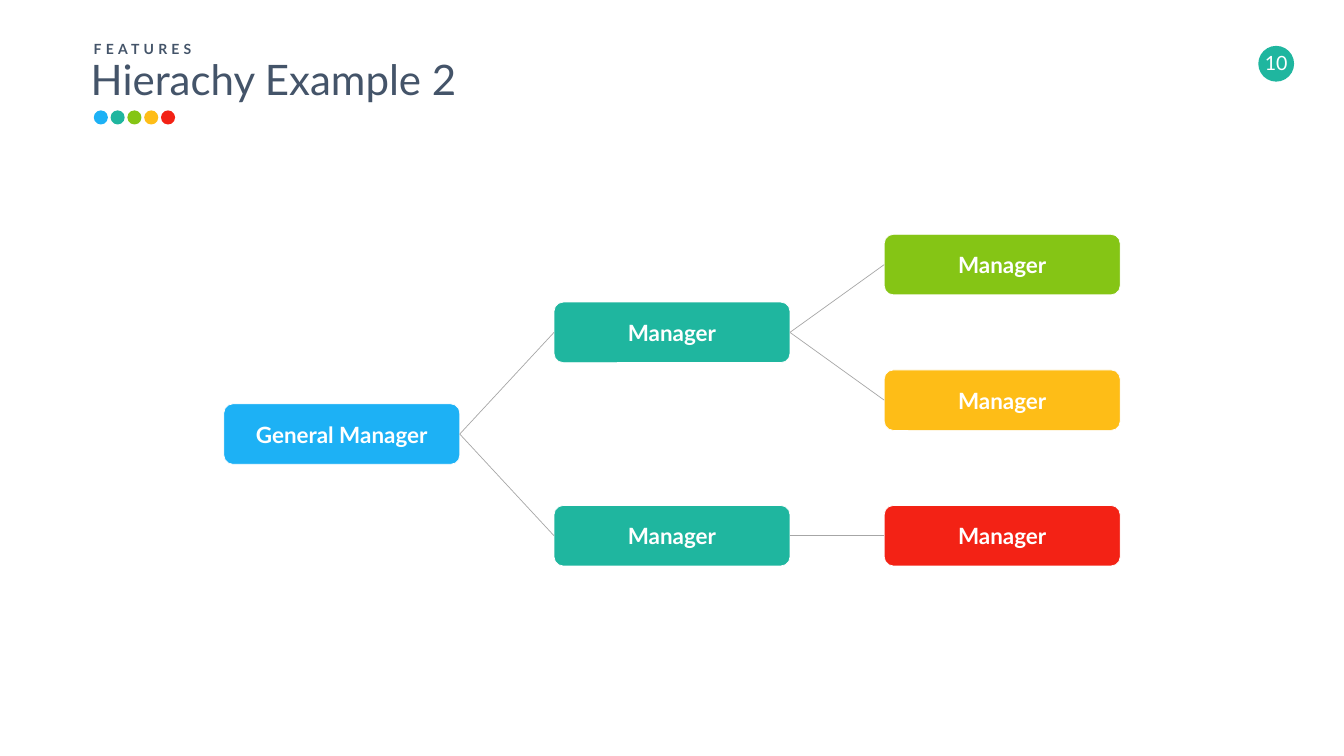
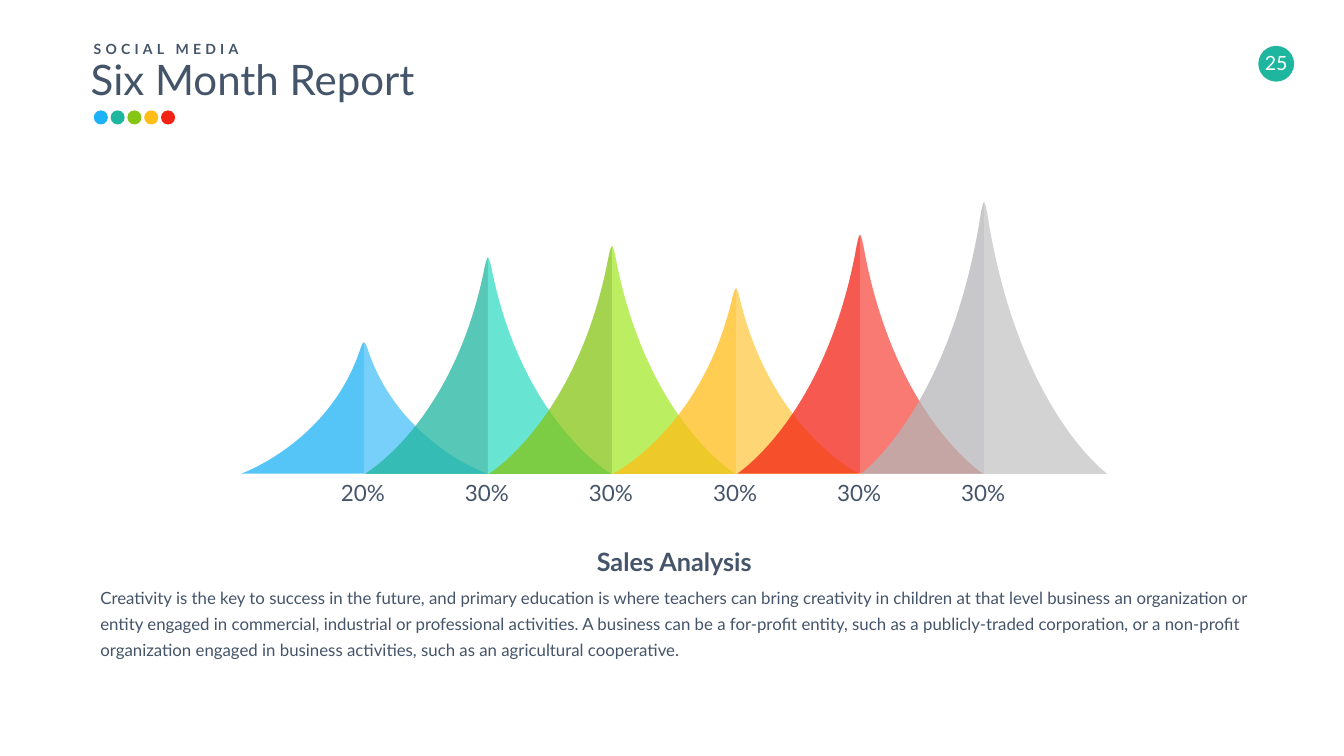
from lxml import etree
from pptx import Presentation
from pptx.dml.color import RGBColor
from pptx.enum.shapes import MSO_CONNECTOR, MSO_SHAPE
from pptx.enum.text import MSO_ANCHOR, MSO_AUTO_SIZE, PP_ALIGN
from pptx.oxml.ns import qn
from pptx.util import Inches, Pt

LEFT, CENTER = PP_ALIGN.LEFT, PP_ALIGN.CENTER
TOP, MIDDLE = MSO_ANCHOR.TOP, MSO_ANCHOR.MIDDLE
NO_AUTOFIT = MSO_AUTO_SIZE.NONE
OVAL, ROUNDED = MSO_SHAPE.OVAL, MSO_SHAPE.ROUNDED_RECTANGLE
STRAIGHT = MSO_CONNECTOR.STRAIGHT
LEFT_SITE, RIGHT_SITE = 1, 3

SLIDE_WIDTH, SLIDE_HEIGHT = 26.66, 15
TITLE_ONLY, TITLE_AND_BODY = 5, 1
FONT = "Lato"
COLORS = {
    "text": "445469", "white": "FFFFFF", "line": "A6A6A6",
    "blue": "1DB1F5", "teal": "1FB69F", "green": "85C515",
    "yellow": "FEBD17", "red": "F32215", "gray": "B6B5B7",
    "light blue": "77D0F9", "light teal": "67E5D2", "light green": "BBEE61",
    "light yellow": "FED774", "light red": "F87A73", "light gray": "D3D3D4",
}
ACCENTS = ["blue", "teal", "green", "yellow", "red"]

# Hierarchy grid: box size, and the step between columns and half rows
GRID_LEFT, GRID_TOP = 4.44, 4.65
COLUMN_STEP, ROW_STEP = 6.55, (10.03 - 4.65) / 8
BOX_WIDTH, BOX_HEIGHT = 4.68, 1.2
BOXES = {  # key: (text, column, row, color)
    "general": ("General Manager", 0, 5, "blue"),
    "upper": ("Manager", 1, 2, "teal"),
    "lower": ("Manager", 1, 8, "teal"),
    "first": ("Manager", 2, 0, "green"),
    "second": ("Manager", 2, 4, "yellow"),
    "third": ("Manager", 2, 8, "red"),
}
REPORTS = [("general", "upper"), ("general", "lower"), ("upper", "first"),
           ("upper", "second"), ("lower", "third")]

# Peaks: (label, color, height), evenly spaced on one baseline
PEAKS = [("20%", "blue", 2.61), ("30%", "teal", 4.29), ("30%", "green", 4.52),
         ("30%", "yellow", 3.68), ("30%", "red", 4.74), ("30%", "gray", 5.39)]
FIRST_PEAK, PEAK_STEP, HALF_WIDTH, BASELINE = 7.22, 2.46, 2.44, 9.4
# Outline as shares of half width and height: two curves, then the base
PEAK_OUTLINE = [(1, 0), (1, 0), (0.3, 0.23), (0.04, 0.92),
                (0.025, 0.965), (0.01, 1), (0, 1), (0, 0)]

ANALYSIS = (
    "Creativity is the key to success in the future, and primary education is "
    "where teachers can bring creativity in children at that level business an "
    "organization or entity engaged in commercial, industrial or professional "
    "activities. A business can be a for-profit entity, such as a "
    "publicly-traded corporation, or a non-profit organization engaged in "
    "business activities, such as an agricultural cooperative.")


def color(name):
    return RGBColor.from_string(COLORS[name])


def place(shape, left, top, width, height):
    shape.left, shape.top = Inches(left), Inches(top)
    shape.width, shape.height = Inches(width), Inches(height)


def write(shape, text, size, name="text", bold=False, align=LEFT,
          anchor=TOP, wrap=True, spacing=None):
    """Put one formatted run into a shape, text box or placeholder."""
    frame = shape.text_frame
    frame.word_wrap = wrap
    frame.auto_size = NO_AUTOFIT
    frame.vertical_anchor = anchor
    paragraph = frame.paragraphs[0]
    paragraph.alignment = align
    run = paragraph.add_run()
    run.text = text
    run.font.name, run.font.size, run.font.bold = FONT, Pt(size), bold
    run.font.color.rgb = color(name)
    if spacing:
        run.font._element.set("spc", str(spacing * 100))
    return paragraph


def add_text(slide, box, text, size, **style):
    text_box = slide.shapes.add_textbox(*map(Inches, box))
    write(text_box, text, size, **style)


def paint(shape, name, outline=None):
    shape.shadow.inherit = False
    shape.fill.solid()
    shape.fill.fore_color.rgb = color(name)
    if outline:
        shape.line.color.rgb = color(outline)
        shape.line.width = Pt(1)
    else:
        shape.line.fill.background()


def add_circle(slide, left, top, size, name):
    circle = slide.shapes.add_shape(OVAL, *map(Inches, (left, top, size, size)))
    paint(circle, name)
    return circle


def add_slide(presentation, layout, section, title, number):
    """Add a slide with its section, title, accent dots and page badge."""
    slide = presentation.slides.add_slide(presentation.slide_layouts[layout])
    place(slide.shapes.title, 1.7, 1.01, 8, 1.11)
    write(slide.shapes.title, title, 60)
    add_text(slide, (1.76, 0.76, 3.5, 0.44), section, 20, bold=True, spacing=6)
    for index, name in enumerate(ACCENTS):
        add_circle(slide, 1.86 + index / 3, 2.19, 0.28, name)
    badge = add_circle(slide, 24.96, 0.91, 0.71, "teal")
    frame = badge.text_frame
    frame.margin_left = frame.margin_right = frame.margin_top = 0
    frame.margin_bottom = Inches(0.06)
    write(badge, number, 28, "white", align=CENTER, anchor=MIDDLE, wrap=False)
    return slide


def add_box(slide, text, column, row, name):
    left = GRID_LEFT + column * COLUMN_STEP
    top = GRID_TOP + row * ROW_STEP
    box = slide.shapes.add_shape(
        ROUNDED, *map(Inches, (left, top, BOX_WIDTH, BOX_HEIGHT)))
    box.adjustments[0] = 0.15
    paint(box, name, outline="white")
    write(box, text, 32, "white", bold=True, align=CENTER, anchor=MIDDLE)
    return box


def connect(slide, manager, report):
    connector = slide.shapes.add_connector(STRAIGHT, 0, 0, 0, 0)
    connector.begin_connect(manager, RIGHT_SITE)
    connector.end_connect(report, LEFT_SITE)
    connector.line.color.rgb = color("line")
    connector.line.width = Pt(1)
    etree.SubElement(connector._element.spPr, qn("a:effectLst"))


def curve_segments(shape, count):
    """Turn the first line segments, three at a time, into cubic curves."""
    lines = shape._element.xpath(".//a:lnTo")
    for start in range(0, count * 3, 3):
        first, *others = lines[start:start + 3]
        curve = etree.Element(qn("a:cubicBezTo"))
        first.addprevious(curve)
        for line in (first, *others):
            curve.append(line[0])
            line.getparent().remove(line)


def add_half_peak(slide, center, height, side, name, opacity=None):
    points = [(Inches(center + side * x * HALF_WIDTH),
               Inches(BASELINE - y * height)) for x, y in PEAK_OUTLINE]
    builder = slide.shapes.build_freeform(*points[0])
    builder.add_line_segments(points[1:], close=True)
    half = builder.convert_to_shape()
    curve_segments(half, 2)
    paint(half, name)
    if opacity:
        fill = half._element.spPr.find(qn("a:solidFill"))
        etree.SubElement(fill[0], qn("a:alpha"), val=str(opacity * 1000))


def add_peak(slide, index, label, name, height):
    center = FIRST_PEAK + index * PEAK_STEP
    add_half_peak(slide, center, height, -1, name, opacity=75)
    add_half_peak(slide, center, height, 1, "light " + name)
    add_text(slide, (center - 0.66, 9.45, 1.28, 0.74), label, 32,
             align=CENTER, wrap=False)


def add_body(slide, text):
    body = slide.placeholders[1]
    place(body, 1.89, 11.49, 22.98, 1.66)
    paragraph = write(body, text, 24)
    paragraph.line_spacing = 1.3
    paragraph.space_before = Pt(0)
    properties = paragraph._p.get_or_add_pPr()
    properties.set("marL", "0")
    properties.set("indent", "0")
    etree.SubElement(properties, qn("a:buNone"))


def build_hierarchy(presentation):
    slide = add_slide(presentation, TITLE_ONLY, "FEATURES",
                      "Hierachy Example 2", "10")
    boxes = {key: add_box(slide, *box) for key, box in BOXES.items()}
    for manager, report in REPORTS:
        connect(slide, boxes[manager], boxes[report])


def build_report(presentation):
    slide = add_slide(presentation, TITLE_AND_BODY, "SOCIAL MEDIA",
                      "Six Month Report", "25")
    for index, peak in enumerate(PEAKS):
        add_peak(slide, index, *peak)
    add_text(slide, (11.03, 10.84, 4.69, 0.61), "Sales Analysis", 36,
             bold=True, align=CENTER, anchor=MIDDLE)
    add_body(slide, ANALYSIS)


def main():
    presentation = Presentation()
    presentation.slide_width = Inches(SLIDE_WIDTH)
    presentation.slide_height = Inches(SLIDE_HEIGHT)
    build_hierarchy(presentation)
    build_report(presentation)
    presentation.save("out.pptx")


if __name__ == "__main__":
    main()
